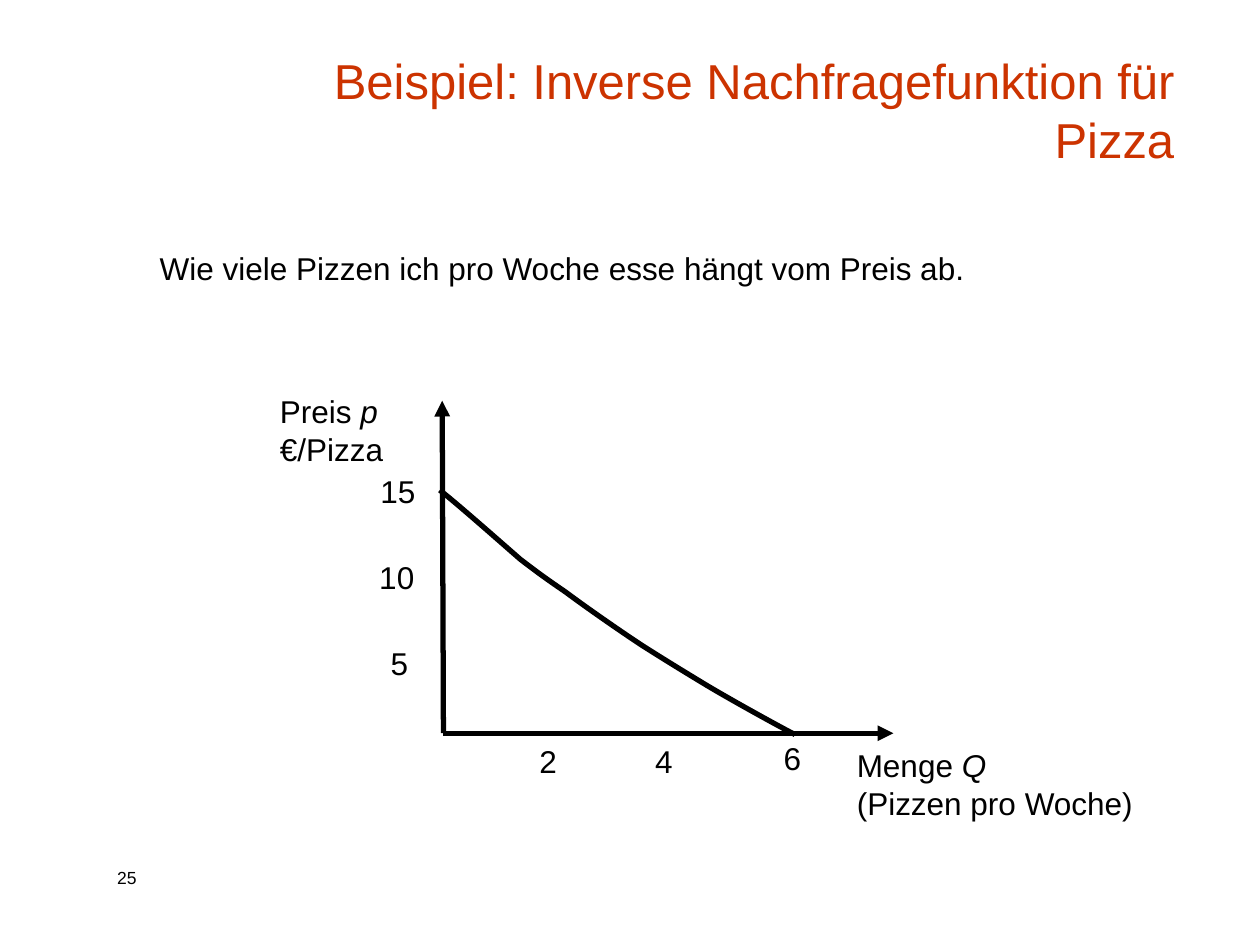
from dataclasses import dataclass

from lxml import etree
from pptx import Presentation
from pptx.dml.color import RGBColor
from pptx.enum import shapes, text
from pptx.oxml import ns
from pptx.util import Pt

FONT = "Arial"
COLOR = {"ink": "000000", "title": "CC3300"}
LINE = 3


@dataclass
class Run:
    text: str
    italic: bool = False


@dataclass
class Label:
    x: float
    y: float
    w: float
    h: float
    rows: list[list[Run]]
    size: float = 18
    padded: bool = False


@dataclass
class Axis:
    start: tuple[float, float]
    end: tuple[float, float]


ORIGIN = (253.4, 419)
AXES = [Axis(ORIGIN, (510.5, 419)), Axis(ORIGIN, (252.7, 229))]

# Start point, then two handles and an end point for each bend
CURVE = [
    (454.3, 419.8),
    (445.7, 415.4), (418.3, 400.3), (403.9, 391.7),
    (389.5, 383), (380.2, 377.3), (366.5, 368.6),
    (353.5, 360), (334.8, 347), (323.3, 338.4),
    (311.8, 330.5), (309.6, 329), (297.4, 319.7),
    (285.8, 309.6), (261.4, 288), (251.3, 280.1),
]

PRICES = [("15", 217.4), ("10", 216.7), ("5", 223.2)]
AMOUNTS = [("2", 308.2, 424), ("4", 374.4, 424), ("6", 447.8, 422.6)]

LABELS = [
    Label(59.8, 491.8, 48, 19.4, [[Run("25")]], 10, True),
    Label(84.2, 139, 614, 29, [
        [Run("Wie viele Pizzen ich pro Woche esse hängt vom Preis ab.")]],
        padded=True),
    Label(160, 224, 93.6, 44, [
        [Run("Preis"), Run(" p", True)], [Run("€/Pizza")]]),
    Label(489.6, 426.2, 171.4, 44, [
        [Run("Menge"), Run(" Q", True)], [Run("(Pizzen pro Woche)")]]),
    *[Label(x, 270 + 49 * i, 24, 21.6, [[Run(t)]])
      for i, (t, x) in enumerate(PRICES)],
    *[Label(x, y, 15, 21.6, [[Run(t)]]) for t, x, y in AMOUNTS],
]


def add_run(para, run: Run, size: float, color: str) -> None:
    part = para.add_run()
    part.text = run.text
    font = part.font
    font.name, font.size, font.italic = FONT, Pt(size), run.italic
    font.color.rgb = RGBColor.from_string(COLOR[color])


def pad(frame, side: float, edge: float) -> None:
    frame.margin_left = frame.margin_right = Pt(side)
    frame.margin_top = frame.margin_bottom = Pt(edge)


def add_title(slide, words: str) -> None:
    title = slide.shapes.title
    title.left, title.top = Pt(134.6), Pt(30.2)
    title.width, title.height = Pt(543.6), Pt(69.8)
    frame = title.text_frame
    frame.word_wrap = True
    frame.auto_size = text.MSO_AUTO_SIZE.NONE
    frame.vertical_anchor = text.MSO_ANCHOR.BOTTOM
    pad(frame, 7.2, 3.6)
    para = frame.paragraphs[0]
    para.alignment = text.PP_ALIGN.RIGHT
    add_run(para, Run(words), 28, "title")


def add_label(slide, label: Label) -> None:
    box = slide.shapes.add_textbox(
        Pt(label.x), Pt(label.y), Pt(label.w), Pt(label.h))
    frame = box.text_frame
    frame.word_wrap = True
    pad(frame, *((7.2, 3.6) if label.padded else (0, 0)))
    for i, row in enumerate(label.rows):
        para = frame.add_paragraph() if i else frame.paragraphs[0]
        for run in row:
            add_run(para, run, label.size, "ink")


def ink(shape) -> None:
    """Give a line or outline its colour and width."""
    shape.line.color.rgb = RGBColor.from_string(COLOR["ink"])
    shape.line.width = Pt(LINE)


def add_axis(slide, axis: Axis) -> None:
    ends = [Pt(v) for v in (*axis.start, *axis.end)]
    line = slide.shapes.add_connector(shapes.MSO_CONNECTOR.STRAIGHT, *ends)
    ink(line)
    etree.SubElement(line.line._get_or_add_ln(), ns.qn("a:tailEnd"),
                     type="triangle")
    etree.SubElement(line._element.spPr, ns.qn("a:effectLst"))


def add_curve(slide, points: list[tuple[float, float]]) -> None:
    first, *rest = [(Pt(x), Pt(y)) for x, y in points]
    pen = slide.shapes.build_freeform(*first)
    pen.add_line_segments(rest, close=False)
    curve = pen.convert_to_shape()
    curve.shadow.inherit = False
    curve.fill.background()
    ink(curve)
    # Join each three straight steps into one cubic bend
    track = curve._element.find(".//" + ns.qn("a:path"))
    steps = track.findall(ns.qn("a:lnTo"))
    for i in range(0, len(steps), 3):
        bend = etree.SubElement(track, ns.qn("a:cubicBezTo"))
        for step in steps[i:i + 3]:
            bend.append(step[0])
            track.remove(step)


def main() -> None:
    deck = Presentation()
    deck.slide_width, deck.slide_height = Pt(720), Pt(540)
    slide = deck.slides.add_slide(deck.slide_layouts[5])
    add_title(slide, "Beispiel: Inverse Nachfragefunktion für Pizza")
    for axis in AXES:
        add_axis(slide, axis)
    add_curve(slide, CURVE)
    for label in LABELS:
        add_label(slide, label)
    deck.save("out.pptx")


if __name__ == "__main__":
    main()
